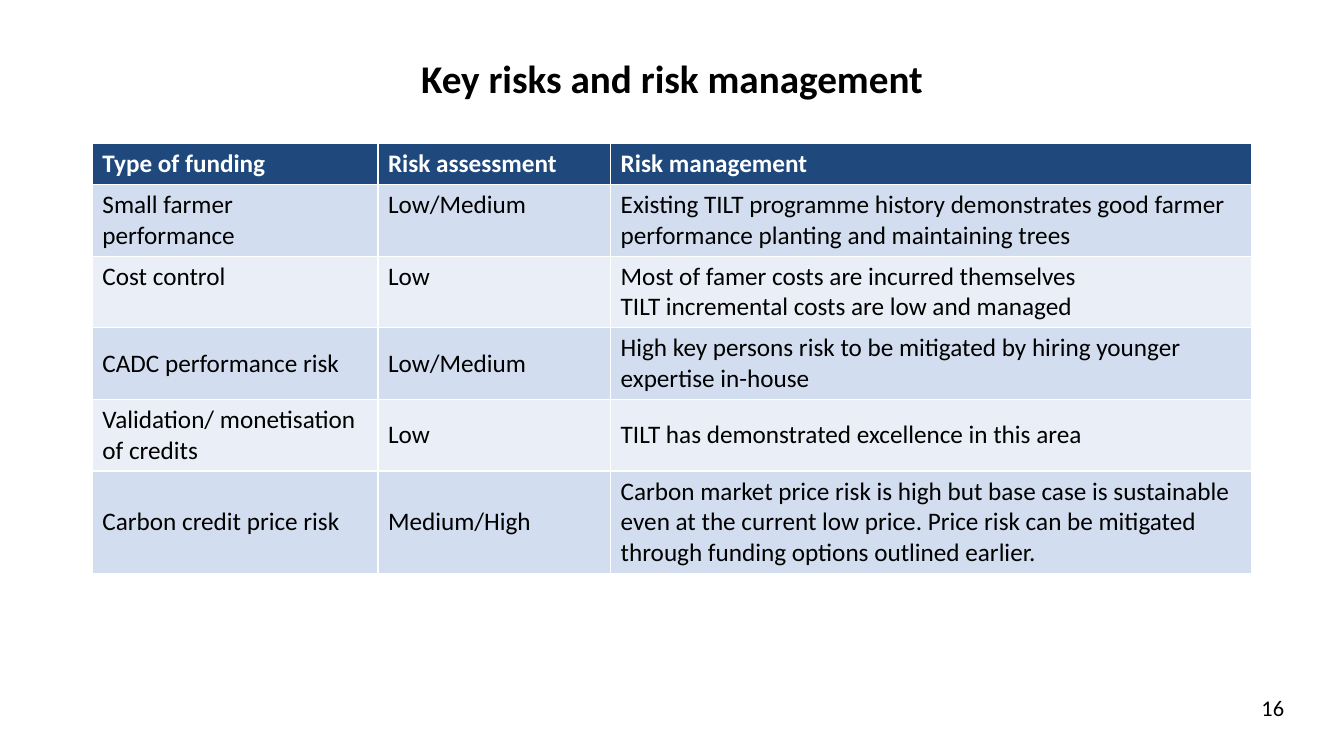
from dataclasses import dataclass

from pptx import Presentation
from pptx.dml.color import RGBColor
from pptx.enum.text import MSO_ANCHOR as Anchor, MSO_AUTO_SIZE as AutoSize, PP_ALIGN as Align
from pptx.util import Inches, Pt

COLS, ROWS = 160, 90  # square grid cells, twelve to the inch


@dataclass(frozen=True)
class Theme:
    font: str = "Calibri"
    ink: str = "000000"
    paper: str = "FFFFFF"
    header: str = "1F497D"
    bands: tuple = ("D2DEEF", "EAEFF7")
    title_size: int = 28
    table_size: int = 18
    number_size: int = 16


class Deck:
    def __init__(self, theme):
        self.theme = theme
        self.prs = Presentation()
        self.prs.slide_width, self.prs.slide_height = Inches(COLS / 12), Inches(ROWS / 12)
        self.s = self.prs.slides.add_slide(self.prs.slide_layouts[5])

    def grid(self, col, row, cols, rows):
        """Turn grid cells into left, top, width and height."""
        x, y = self.prs.slide_width / COLS, self.prs.slide_height / ROWS
        return [round(v) for v in (col * x, row * y, cols * x, rows * y)]

    def set_text(self, tf, text, size, color, bold=False, **paragraph_format):
        """Fill a text frame, one paragraph for each line of text."""
        tf.text = text
        font = dict(name=self.theme.font, size=Pt(size), bold=bold)
        for p in tf.paragraphs:
            for key, value in paragraph_format.items():
                setattr(p, key, value)
            for r in p.runs:
                for key, value in font.items():
                    setattr(r.font, key, value)
                r.font.color.rgb = RGBColor.from_string(color)

    def title(self, text, *place):
        sp = self.s.shapes.title
        sp.left, sp.top, sp.width, sp.height = self.grid(*place)
        sp.text_frame.vertical_anchor = Anchor.MIDDLE
        self.set_text(sp.text_frame, text, self.theme.title_size, self.theme.ink,
                      bold=True, alignment=Align.CENTER, line_spacing=0.9)

    def table(self, header, body, place, widths, row_height, middle_from):
        """Add a banded table; rows from middle_from on are centred vertically."""
        t = self.theme
        rows = [header, *body]
        frame = self.s.shapes.add_table(len(rows), len(header), *self.grid(*place))
        table = frame.table
        for column, width in zip(table.columns, widths):
            column.width = self.grid(0, 0, width, 0)[2]
        for i, values in enumerate(rows):
            table.rows[i].height = self.grid(0, 0, 0, row_height)[3]
            fill = t.bands[(i - 1) % 2] if i else t.header
            for cell, text in zip(table.rows[i].cells, values):
                cell.fill.solid()
                cell.fill.fore_color.rgb = RGBColor.from_string(fill)
                cell.vertical_anchor = Anchor.MIDDLE if i >= middle_from else Anchor.TOP
                self.set_text(cell.text_frame, text, t.table_size,
                              t.ink if i else t.paper, bold=i == 0)
        frame.height = self.grid(*place)[3]

    def page_number(self, text, *place):
        tf = self.s.shapes.add_textbox(*self.grid(*place)).text_frame
        tf.word_wrap = False
        tf.auto_size = AutoSize.SHAPE_TO_FIT_TEXT
        self.set_text(tf, text, self.theme.number_size, self.theme.ink)


HEADER = ("Type of funding", "Risk assessment", "Risk management")
RISKS = [
    ("Small farmer performance", "Low/Medium",
     "Existing TILT programme history demonstrates good farmer "
     "performance planting and maintaining trees"),
    ("Cost control", "Low",
     "Most of famer costs are incurred themselves\n"
     "TILT incremental costs are low and managed"),
    ("CADC performance risk", "Low/Medium",
     "High key persons risk to be mitigated by hiring younger expertise in-house"),
    ("Validation/ monetisation of credits", "Low",
     "TILT has demonstrated excellence in this area"),
    ("Carbon credit price risk", "Medium/High",
     "Carbon market price risk is high but base case is sustainable even at the "
     "current low price. Price risk can be mitigated through funding options "
     "outlined earlier."),
]


def main():
    deck = Deck(Theme())
    deck.title("Key risks and risk management", 11, 4.8, 138, 9.7)
    deck.table(HEADER, RISKS, place=(11, 17.1, 138, 50.5),
               widths=(34, 27.7, 76.3), row_height=4.87, middle_from=3)
    deck.page_number("16", 149, 82, 5.2, 4.44)
    deck.prs.save("out.pptx")


if __name__ == "__main__":
    main()
